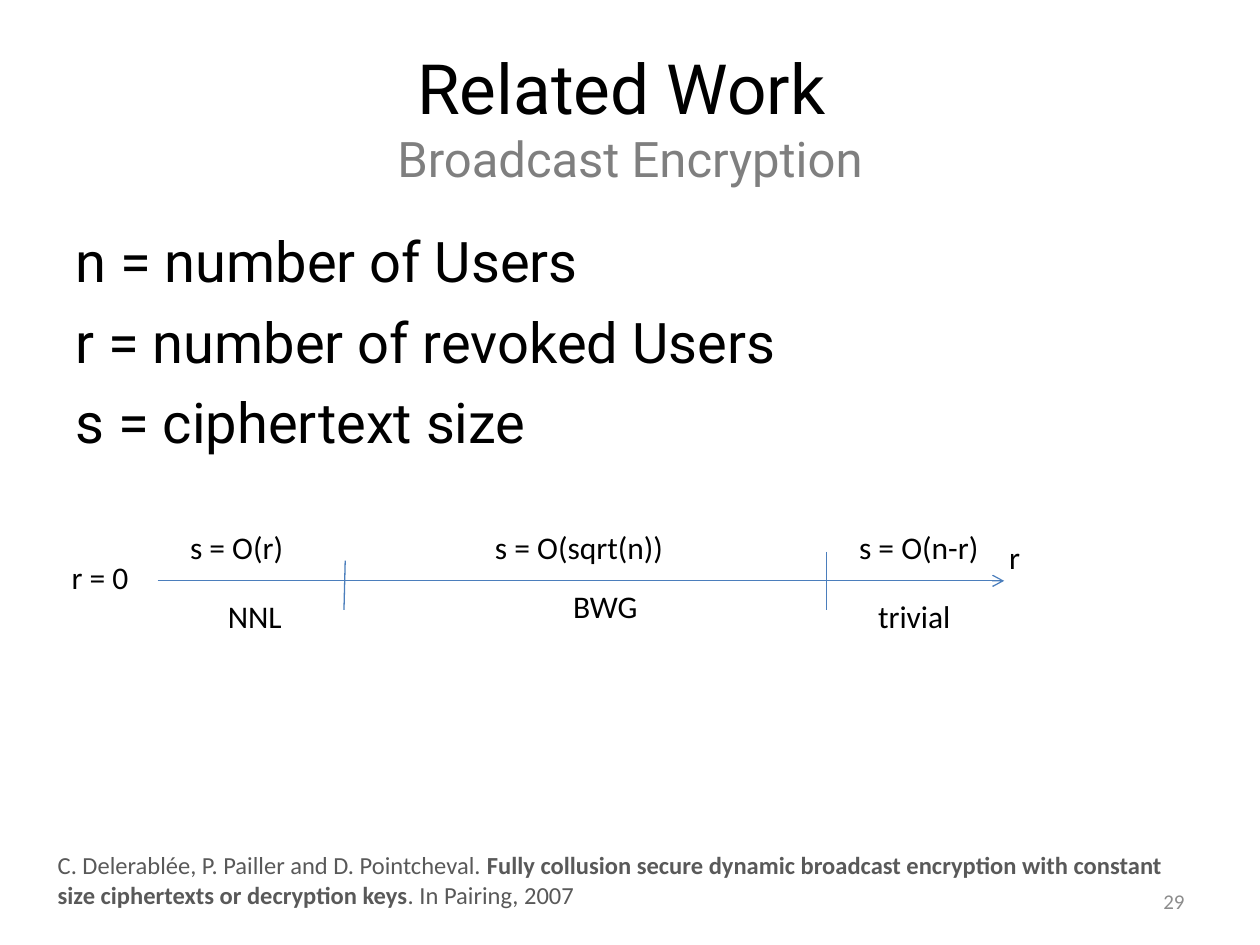
from dataclasses import dataclass

from lxml import etree
from pptx import Presentation, util as u
from pptx.dml.color import RGBColor
from pptx.enum import shapes, text
from pptx.oxml import ns

PX = 9144  # 100 px to the inch

COLORS = {
    "ink": "000000",
    "subtitle": "7F7F7F",
    "citation": "595959",
    "number": "8C8C8C",
    "axis": "4B7EBC",
}


@dataclass(frozen=True)
class Style:
    font: str
    size: float
    color: str
    bold: bool = False


@dataclass(frozen=True)
class Box:
    left: int
    top: int
    width: int
    height: int


@dataclass(frozen=True)
class Label:
    words: str
    box: Box


@dataclass(frozen=True)
class Line:
    x1: int
    y1: int
    x2: int
    y2: int
    arrow: bool = False


TITLE = Style("Roboto", 39.6, "ink")
SUBTITLE = Style("Roboto", 28, "subtitle")
BODY = Style("Roboto", 32, "ink")
LABEL = Style("Calibri", 18, "ink")
NUMBER = Style("Calibri", 12, "number")
CITATION = Style("Calibri", 14, "citation")
CITED_TITLE = Style("Calibri", 14, "citation", bold=True)

AXIS_Y = 461
BOUND_Y = 414
LABEL_HEIGHT = 40

DEFINITIONS = ["n = number of Users", "r = number of revoked Users", "s = ciphertext size"]

AXIS_LINES = [
    Line(656, 438, 656, 484),
    Line(274, 445, 273, 484),
    Line(125, AXIS_Y, 797, AXIS_Y, arrow=True),
]

AXIS_LABELS = [
    # Schemes below the axis
    Label("NNL", Box(171, 469, 63, LABEL_HEIGHT)),
    Label("BWG", Box(445, 461, 72, LABEL_HEIGHT)),
    Label("trivial", Box(687, 469, 78, LABEL_HEIGHT)),
    # Ciphertext sizes above it
    Label("s = O(r)", Box(141, BOUND_Y, 95, LABEL_HEIGHT)),
    Label("s = O(sqrt(n))", Box(383, BOUND_Y, 155, LABEL_HEIGHT)),
    Label("s = O(n-r)", Box(672, BOUND_Y, 116, LABEL_HEIGHT)),
    # Axis ends
    Label("r = 0", Box(47, 438, 66, LABEL_HEIGHT)),
    Label("r", Box(791, 422, 29, LABEL_HEIGHT)),
]


def style_run(run, style: Style) -> None:
    run.font.name = style.font
    run.font.size = u.Pt(style.size)
    run.font.bold = style.bold
    run.font.color.rgb = RGBColor.from_string(COLORS[style.color])


def add_text(slide, box: Box, words: str, styles: list[Style], wrap: bool = True):
    """Add a text box; the styles apply to its runs in turn, the last one to the rest."""
    edges = (edge * PX for edge in (box.left, box.top, box.width, box.height))
    frame = slide.shapes.add_textbox(*edges).text_frame
    frame.word_wrap = wrap
    frame.text = words
    runs = [run for paragraph in frame.paragraphs for run in paragraph.runs]
    for i, run in enumerate(runs):
        style_run(run, styles[min(i, len(styles) - 1)])
    return frame


def add_line(slide, line: Line) -> None:
    ends = (end * PX for end in (line.x1, line.y1, line.x2, line.y2))
    connector = slide.shapes.add_connector(shapes.MSO_CONNECTOR.STRAIGHT, *ends)
    connector.line.color.rgb = RGBColor.from_string(COLORS["axis"])
    connector.line.width = u.Pt(0.75)
    if line.arrow:
        etree.SubElement(connector.line._get_or_add_ln(), ns.qn("a:tailEnd"), type="arrow")
    etree.SubElement(connector._element.spPr, ns.qn("a:effectLst"))


def main() -> None:
    deck = Presentation()
    deck.slide_width, deck.slide_height = 1000 * PX, 750 * PX
    slide = deck.slides.add_slide(deck.slide_layouts[6])

    # Title and subtitle
    title = add_text(slide, Box(50, 30, 900, 125),
                     "Related Work \vBroadcast Encryption", [TITLE, SUBTITLE])
    title.vertical_anchor = text.MSO_ANCHOR.MIDDLE
    title.paragraphs[0].alignment = text.PP_ALIGN.CENTER

    # Definitions
    body = add_text(slide, Box(50, 175, 900, 495), "\n".join(DEFINITIONS), [BODY])
    for paragraph in body.paragraphs:
        paragraph.space_before = u.Pt(7.5)

    # Page number
    number = add_text(slide, Box(717, 695, 233, 40), "29", [NUMBER])
    number.vertical_anchor = text.MSO_ANCHOR.MIDDLE
    number.paragraphs[0].alignment = text.PP_ALIGN.RIGHT

    # Axis of revoked users
    for line in AXIS_LINES:
        add_line(slide, line)
    for label in AXIS_LABELS:
        add_text(slide, label.box, label.words, [LABEL], wrap=False)

    # Citation
    citation = add_text(slide, Box(36, 670, 930, 58),
                        "C. Delerablée, P. Pailler and D. Pointcheval. ", [CITATION])
    for words, style in [
        ("Fully collusion secure dynamic broadcast encryption with constant size "
         "ciphertexts or decryption keys", CITED_TITLE),
        (". In Pairing, 2007", CITATION),
    ]:
        run = citation.paragraphs[0].add_run()
        run.text = words
        style_run(run, style)

    deck.save("out.pptx")


if __name__ == "__main__":
    main()
